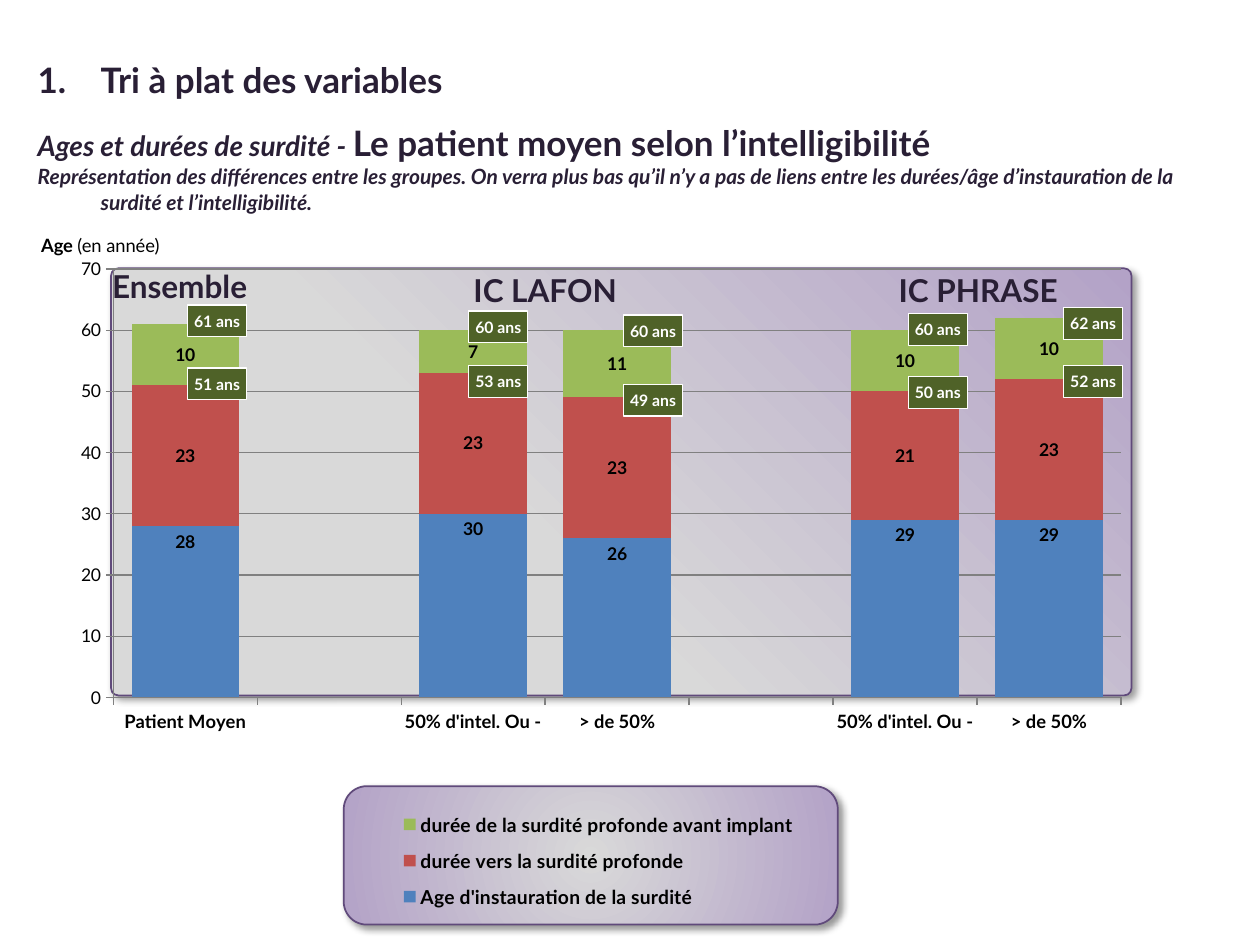
from lxml import etree
from pptx import Presentation
from pptx.chart.data import CategoryChartData
from pptx.dml.color import RGBColor
from pptx.enum.chart import XL_CHART_TYPE as ChartType, XL_LABEL_POSITION as LabelPos
from pptx.enum.chart import XL_LEGEND_POSITION as LegendPos
from pptx.enum.shapes import MSO_SHAPE as Shape
from pptx.enum.text import MSO_ANCHOR as Anchor, PP_ALIGN as Align
from pptx.oxml import parse_xml
from pptx.oxml.ns import nsdecls, qn
from pptx.util import Cm, Pt

FONT = "Lato"
INK, BLACK, WHITE, GRID = "291F35", "000000", "FFFFFF", "808080"
PURPLE, LILAC, GREY, OLIVE = "604A7B", "B3A2C7", "D9D9D9", "4F6228"

CATEGORIES = ["Patient Moyen", "", "50% d'intel. Ou -", "> de 50%",
              "", "50% d'intel. Ou -", "> de 50%"]
SERIES = [
    ("Age d'instauration de la surdité", "4F81BD", [28, None, 30, 26, None, 29, 29]),
    ("durée vers la surdité profonde", "C0504D", [23, None, 23, 23, None, 21, 23]),
    ("durée de la surdité profonde avant implant", "9BBB59", [10, None, 7, 11, None, 10, 10]),
]
# Column index, left, top of the upper and of the lower badge, from the chart corner
BADGES = [(0, 2.61, 1.12, 2.39), (2, 8.28, 1.24, 2.34), (3, 11.4, 1.32, 2.72),
          (5, 17.14, 1.29, 2.56), (6, 20.27, 1.17, 2.34)]


def color(code):
    return RGBColor.from_string(code)


def set_font(font, size, code=BLACK, bold=True, italic=None):
    font.name, font.size, font.bold = FONT, Pt(size), bold
    font.italic = italic
    font.color.rgb = color(code)


def add_span(para, text):
    span = para.add_run()
    span.text = text
    return span


def set_insets(frame):
    frame.margin_left = frame.margin_right = Cm(0.1)
    frame.margin_top = frame.margin_bottom = Cm(0.13)
    frame.vertical_anchor = Anchor.MIDDLE


def add_label(page, left, top, width, height, text, size):
    box = page.shapes.add_textbox(Cm(left), Cm(top), Cm(width), Cm(height))
    box.text_frame.word_wrap = False
    para = box.text_frame.paragraphs[0]
    add_span(para, text)
    set_font(para.font, size, INK)
    return box


def add_panel(page, left, top, width, height, radius, first_stop, focus):
    """Rounded panel with a radial gradient and a soft shadow."""
    panel = page.shapes.add_shape(Shape.ROUNDED_RECTANGLE,
                                  Cm(left), Cm(top), Cm(width), Cm(height))
    panel.adjustments[0] = radius
    panel.line.color.rgb = color(PURPLE)
    panel.line.width = Pt(1)
    sides = " ".join(f'{side}="{share * 1000}"' for side, share in zip("ltrb", focus))
    gradient = parse_xml(
        f'<a:gradFill {nsdecls("a")} rotWithShape="1"><a:gsLst>'
        f'<a:gs pos="{first_stop * 1000}"><a:srgbClr val="{GREY}"/></a:gs>'
        f'<a:gs pos="100000"><a:srgbClr val="{LILAC}"/></a:gs></a:gsLst>'
        f'<a:path path="circle"><a:fillToRect {sides}/></a:path></a:gradFill>')
    shadow = parse_xml(
        f'<a:effectLst {nsdecls("a")}><a:outerShdw blurRad="{Pt(4)}" dist="{Pt(3)}" '
        f'dir="2700000" algn="tl" rotWithShape="0"><a:srgbClr val="{BLACK}">'
        '<a:alpha val="40000"/></a:srgbClr></a:outerShdw></a:effectLst>')
    properties = panel.element.spPr
    properties.find(qn("a:prstGeom")).addnext(gradient)
    properties.find(qn("a:ln")).addnext(shadow)


def set_layout(parent, index, left, top, width, height, inner=False):
    """Fix the place of a chart part, in shares of the chart."""
    for old in parent.findall(qn("c:layout")):
        parent.remove(old)
    layout = parse_xml(f'<c:layout {nsdecls("c")}><c:manualLayout/></c:layout>')
    values = [("xMode", "edge"), ("yMode", "edge"),
              ("x", left), ("y", top), ("w", width), ("h", height)]
    if inner:
        values.insert(0, ("layoutTarget", "inner"))
    for tag, value in values:
        etree.SubElement(layout[0], qn(f"c:{tag}")).set("val", str(value))
    parent.insert(index, layout)


def add_badge(page, left, top, years):
    badge = page.shapes.add_shape(Shape.RECTANGLE, Cm(left), Cm(top), Cm(1.19), Cm(0.64))
    badge.shadow.inherit = False
    badge.fill.solid()
    badge.fill.fore_color.rgb = color(OLIVE)
    badge.line.color.rgb = color(WHITE)
    badge.line.width = Pt(0.75)
    set_insets(badge.text_frame)
    badge.text_frame.word_wrap = False
    para = badge.text_frame.paragraphs[0]
    para.alignment = Align.CENTER
    add_span(para, f"{years} ans")
    set_font(para.font, 9, WHITE)


def add_age_chart(page, left, top, width, height):
    data = CategoryChartData()
    data.categories = CATEGORIES
    for name, _, values in SERIES:
        data.add_series(name, values)
    chart = page.shapes.add_chart(ChartType.COLUMN_STACKED, Cm(left), Cm(top),
                                  Cm(width), Cm(height), data).chart
    chart.has_title = False
    set_font(chart.font, 10, bold=False)

    # Columns and their labels
    plot = chart.plots[0]
    plot.gap_width, plot.overlap, plot.vary_by_categories = 34, 100, False
    for series, (_, fill, _) in zip(plot.series, SERIES):
        series.format.fill.solid()
        series.format.fill.fore_color.rgb = color(fill)
        labels = series.data_labels
        labels.show_value = True
        labels.position = LabelPos.CENTER
        set_font(labels.font, 10)
    plot.series[0].data_labels.position = LabelPos.INSIDE_END

    # Axes
    ages = chart.value_axis
    ages.minimum_scale, ages.maximum_scale, ages.major_unit = 0, 70, 10
    ages.has_major_gridlines = True
    set_font(ages.tick_labels.font, 10, bold=False)
    set_font(chart.category_axis.tick_labels.font, 10.5)
    for line in (ages.format.line, chart.category_axis.format.line,
                 ages.major_gridlines.format.line):
        line.color.rgb = color(GRID)
        line.width = Pt(0.75)

    # Legend
    chart.has_legend = True
    legend = chart.legend
    legend.position = LegendPos.RIGHT
    legend.include_in_layout = False
    set_font(legend.font, 11)
    set_layout(legend._element, 1, 0.27, 0.82, 0.4, 0.18)
    set_layout(plot._element.getparent(), 0, 0.048, 0.029, 0.876, 0.638, inner=True)

    # Ages reached at implantation and at profound deafness
    for column, shift, upper, lower in BADGES:
        onset, decline, wait = (values[column] for _, _, values in SERIES)
        add_badge(page, left + shift, top + upper, onset + decline + wait)
        add_badge(page, left + shift, top + lower, onset + decline)


def add_heading(page, left, top, width, height):
    box = page.shapes.add_textbox(Cm(left), Cm(top), Cm(width), Cm(height))
    frame = box.text_frame
    frame.word_wrap = True
    title, subtitle, remark = (frame.paragraphs[0], frame.add_paragraph(),
                               frame.add_paragraph())
    add_span(title, "Tri à plat des variables")
    set_font(title.font, 20, INK)
    for text, size, italic in (("Ages et durées de surdité - ", 16, True),
                               ("Le patient moyen selon l’intelligibilité", 20, False)):
        set_font(add_span(subtitle, text).font, size, INK, italic=italic)
    add_span(remark, "Représentation des différences entre les groupes. On verra plus bas "
                     "qu’il n’y a pas de liens entre les durées/âge d’instauration de la "
                     "surdité et l’intelligibilité.")
    set_font(remark.font, 12, INK, italic=True)
    title.line_spacing = subtitle.line_spacing = 1.5
    subtitle.level = remark.level = 1
    for para in frame.paragraphs:
        properties = para._p.get_or_add_pPr()
        properties.set("marL", str(Cm(1.27)))
        properties.set("indent", str(-Cm(1.27)))
    number = parse_xml(f'<a:buAutoNum {nsdecls("a")} type="arabicPeriod"/>')
    title._p.pPr.find(qn("a:lnSpc")).addnext(number)


def add_group_titles(page, left, top):
    add_label(page, left, top, 3.63, 1.02, "Ensemble", 18)
    for shift, text in ((6.96, "IC LAFON"), (15.69, "IC PHRASE")):
        box = add_label(page, left + shift, top + 0.02, 4.04, 1.12, text, 18)
        set_insets(box.text_frame)
        box.text_frame.paragraphs[0].alignment = Align.CENTER


def add_axis_title(page, left, top):
    para = add_label(page, left, top, 3.15, 0.71, "Age ", 10.5).text_frame.paragraphs[0]
    set_font(para.font, 10.5)
    add_span(para, "(en année)").font.bold = False


def main():
    deck = Presentation()
    deck.slide_width, deck.slide_height = Cm(25.4), Cm(19.05)
    page = deck.slides.add_slide(deck.slide_layouts[6])
    add_panel(page, 2.24, 5.41, 20.57, 8.61, 0.017, 40, (0, 100, 100, 0))
    add_panel(page, 6.93, 15.85, 9.96, 2.79, 0.167, 0, (50, 50, 50, 50))
    add_age_chart(page, 1.17, 5.03, 23.19, 13.54)
    add_axis_title(page, 0.58, 4.6)
    add_heading(page, 0.51, 0.64, 23.8, 5.13)
    add_group_titles(page, 2.01, 5.26)
    deck.save("out.pptx")


if __name__ == "__main__":
    main()
